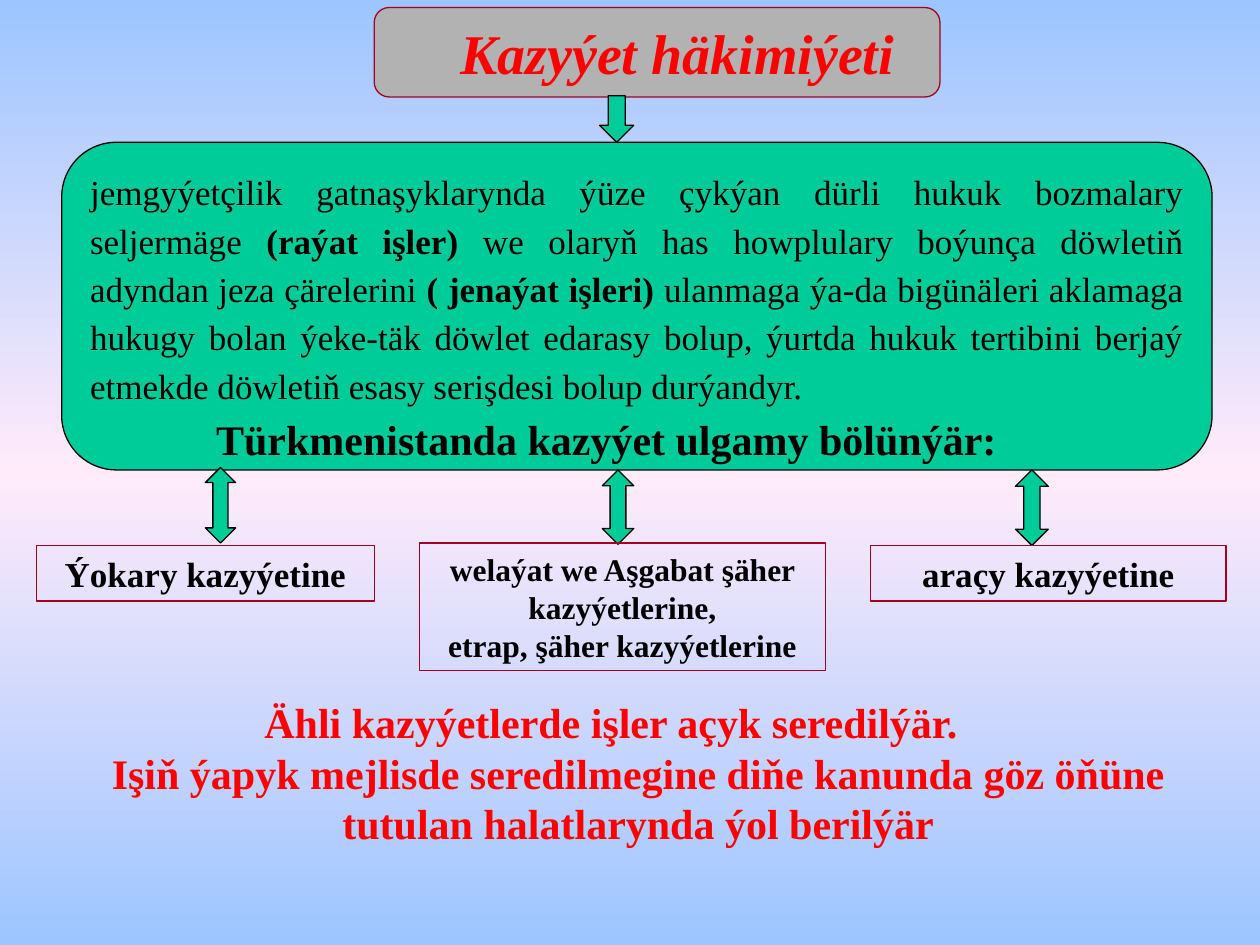
from copy import deepcopy
from dataclasses import dataclass

from pptx import Presentation
from pptx.dml.color import RGBColor
from pptx.enum.shapes import MSO_SHAPE as Shape
from pptx.enum.text import MSO_ANCHOR as Anchor, PP_ALIGN as Align
from pptx.oxml.ns import qn
from pptx.util import Inches, Pt

COLUMNS, ROWS = 100, 75
UNIT = Inches(0.1)


@dataclass(frozen=True)
class Theme:
    font: str = "Times New Roman"
    sky: str = "9DC5FF"
    blush: str = "FFEBFA"
    grey: str = "B2B2B2"
    green: str = "00CC99"
    wine: str = "A50021"
    red: str = "FF0000"
    black: str = "000000"
    title: int = 32
    heading: int = 24
    body: int = 20
    small: int = 18
    line: float = 0.75


@dataclass(frozen=True)
class Box:
    """An area measured in grid columns and rows."""
    left: float
    top: float
    width: float
    height: float

    def area(self, left, top, width, height):
        """Return a box placed relative to this one."""
        return Box(self.left + left, self.top + top, width, height)

    def lengths(self):
        return [round(n * UNIT) for n in (self.left, self.top, self.width, self.height)]


THEME = Theme()


def rgb(code):
    return RGBColor.from_string(code)


def add_block(page, kind, box, line, fill=None, anchor=Anchor.MIDDLE):
    block = page.shapes.add_shape(kind, *box.lengths())
    block.shadow.inherit = False
    if fill:
        block.fill.solid()
        block.fill.fore_color.rgb = rgb(fill)
    else:
        block.fill.background()
    block.line.color.rgb = rgb(line)
    block.line.width = Pt(THEME.line)
    block.text_frame.word_wrap = True
    block.text_frame.vertical_anchor = anchor
    return block


def write(para, spans, size, color=THEME.black, align=Align.CENTER, bold=True,
          italic=False, indent=0.0):
    """Fill a paragraph; every second span is set in the opposite weight."""
    for index, words in enumerate(spans):
        span = para.add_run()
        span.text = words
        if index % 2:
            span.font.bold = not bold
    if indent:
        para._p.get_or_add_pPr().set("indent", str(round(indent * UNIT)))
    para.alignment = align
    font = para.font
    font.name, font.size, font.bold, font.italic = THEME.font, Pt(size), bold, italic
    font.color.rgb = rgb(color)


def paint_background(page):
    fill = page.background.fill
    fill.gradient()
    fill.gradient_angle = 90
    stops = page.element.find(".//" + qn("a:gsLst"))
    stops.insert(1, deepcopy(stops[0]))
    colors = (THEME.sky, THEME.blush, THEME.sky)
    for index, (stop, color) in enumerate(zip(fill.gradient_stops, colors)):
        stop.position = index / 2
        stop.color.rgb = rgb(color)


def add_title(page, box):
    block = add_block(page, Shape.ROUNDED_RECTANGLE, box, THEME.wine, THEME.grey)
    write(block.text_frame.paragraphs[0], ["Kazyýet häkimiýeti"], THEME.title,
          THEME.red, Align.LEFT, italic=True, indent=5.5)


def add_definition(page, box):
    block = add_block(page, Shape.ROUNDED_RECTANGLE, box, THEME.black, THEME.green, Anchor.TOP)
    frame = block.text_frame
    write(frame.paragraphs[0], [
        "jemgyýetçilik gatnaşyklarynda ýüze çykýan dürli hukuk bozmalary seljermäge ",
        "(raýat işler) ",
        "we olaryň has howplulary boýunça döwletiň adyndan jeza çärelerini ",
        "( jenaýat işleri) ",
        "ulanmaga ýa-da bigünäleri aklamaga hukugy bolan ýeke-täk döwlet edarasy bolup, "
        "ýurtda hukuk tertibini berjaý etmekde döwletiň esasy serişdesi bolup durýandyr.",
    ], THEME.body, align=Align.JUSTIFY, bold=False)
    write(frame.add_paragraph(), ["Türkmenistanda kazyýet ulgamy bölünýär:"],
          THEME.heading, align=Align.JUSTIFY, indent=10)
    for para in frame.paragraphs:
        para.line_spacing = 1.15


def add_arrow(page, kind, box):
    add_block(page, kind, box, THEME.black, THEME.green)


def add_courts(page, box):
    """Three court boxes, each below a double arrow."""
    courts = (
        ((13.4, 0, 2.4, 6), (0, 6.2, 26.8, 4.4), THEME.body, ["Ýokary kazyýetine"]),
        ((44.9, 0.2, 2.5, 5.9), (30.4, 6, 32.2, 10.1), THEME.small,
         ["welaýat we Aşgabat şäher kazyýetlerinе,", "etrap, şäher kazyýetlerinе"]),
        ((77.7, 0.2, 2.6, 6), (66.2, 6.2, 28.2, 4.4), THEME.body, ["araçy kazyýetine"]),
    )
    for arrow, court, size, lines in courts:
        add_arrow(page, Shape.UP_DOWN_ARROW, box.area(*arrow))
        frame = add_block(page, Shape.RECTANGLE, box.area(*court), THEME.wine).text_frame
        for index, line in enumerate(lines):
            para = frame.add_paragraph() if index else frame.paragraphs[0]
            write(para, [line], size)


def add_conclusion(page, box):
    frame = page.shapes.add_textbox(*box.lengths()).text_frame
    frame.word_wrap = True
    write(frame.paragraphs[0], ["Ähli kazyýetlerde işler açyk seredilýär."],
          THEME.heading, THEME.red, Align.JUSTIFY, indent=16.6)
    write(frame.add_paragraph(),
          ["Işiň ýapyk mejlisde seredilmegine diňe kanunda göz öňüne "
           "tutulan halatlarynda ýol berilýär"], THEME.heading, THEME.red)


def main():
    deck = Presentation()
    deck.slide_width, deck.slide_height = COLUMNS * UNIT, ROWS * UNIT
    page = deck.slides.add_slide(deck.slide_layouts[6])
    whole = Box(0, 0, COLUMNS, ROWS)
    paint_background(page)
    add_title(page, whole.area(29.7, 0.6, 44.9, 7.1))
    add_definition(page, whole.area(4.9, 11.3, 91.3, 26))
    add_arrow(page, Shape.DOWN_ARROW, whole.area(47.6, 7.6, 2.7, 3.7))
    add_courts(page, whole.area(2.9, 37.1, 94.4, 16.1))
    add_conclusion(page, whole.area(3.4, 54.8, 94.5, 13.1))
    deck.save("out.pptx")


if __name__ == "__main__":
    main()
